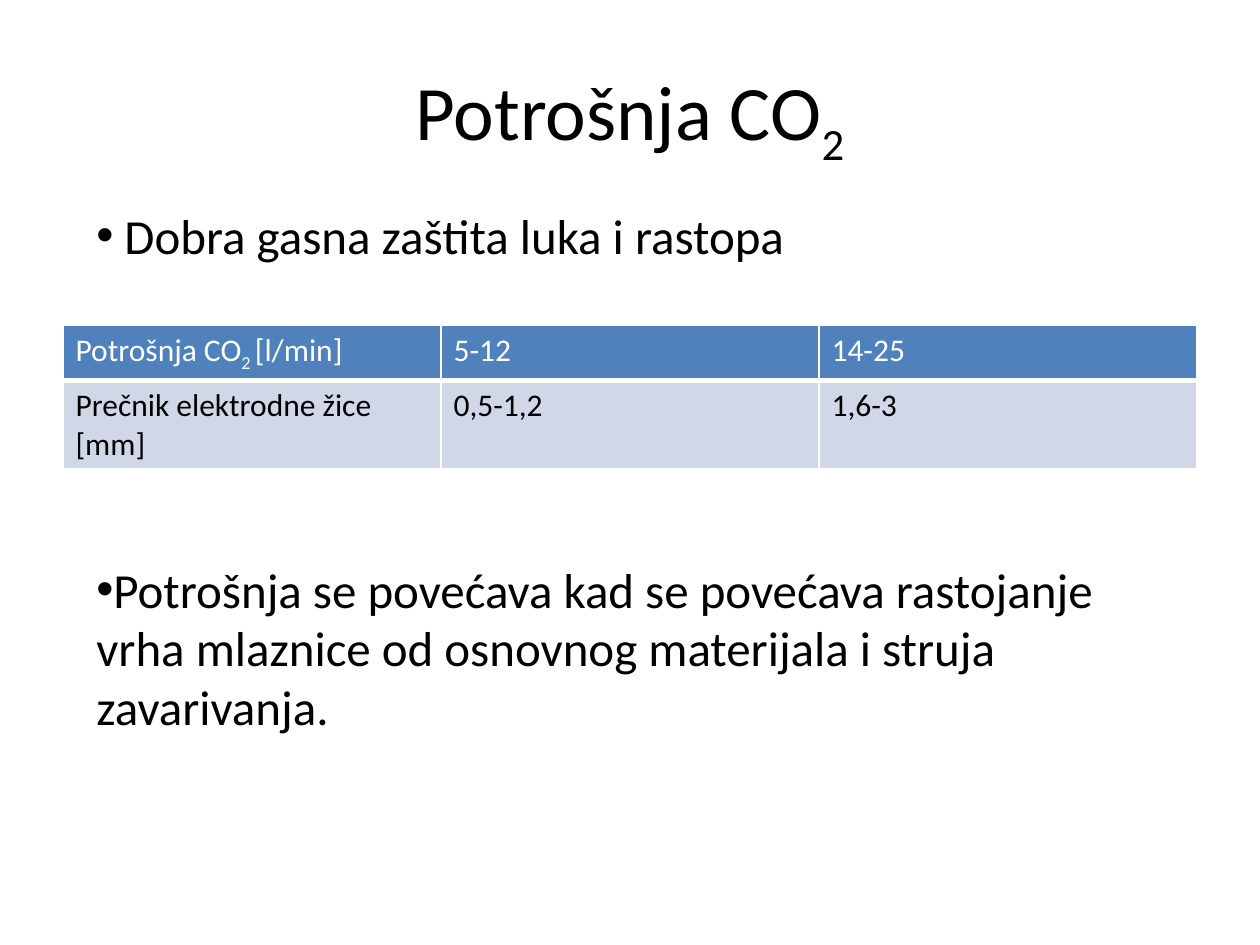
"""Build a slide on CO2 consumption with a title, two bullets and a table."""
from lxml import etree
from pptx import Presentation
from pptx.dml.color import RGBColor
from pptx.enum.text import MSO_ANCHOR, MSO_AUTO_SIZE, PP_ALIGN
from pptx.oxml.ns import qn
from pptx.util import Emu, Pt

PX = 914400 / 126
MIDDLE = MSO_ANCHOR.MIDDLE
GROW = MSO_AUTO_SIZE.SHAPE_TO_FIT_TEXT
CENTER = PP_ALIGN.CENTER
THEME = {
    "font": "Calibri",
    "black": "000000",
    "white": "FFFFFF",
    "header": "4F81BD",
    "band": "D0D8E8",
    "title_size": 44,
    "body_size": 28,
    "table_size": 18,
}


def px(*lengths):
    return [Emu(round(length * PX)) for length in lengths]


def write(para, *texts, size, color=THEME["black"], subscript=None):
    for index, text in enumerate(texts):
        span = para.add_run()
        span.text = text
        span.font.name = THEME["font"]
        span.font.size = Pt(size)
        span.font.color.rgb = RGBColor.from_string(color)
        if index == subscript:
            span.font._element.set("baseline", "-25000")


deck = Presentation()
deck.slide_width, deck.slide_height = px(1260, 945)
page = deck.slides.add_slide(deck.slide_layouts[6])

title = page.shapes.add_textbox(*px(63, 38, 1134, 157)).text_frame
title.word_wrap = True
title.vertical_anchor = MIDDLE
title.paragraphs[0].alignment = CENTER
write(title.paragraphs[0], "Potrošnja CO", "2", size=THEME["title_size"], subscript=1)

rows = [
    [("Potrošnja CO", "2 ", "[l/min]"), ("5-12",), ("14-25",)],
    [("Prečnik elektrodne žice [mm]",), ("0,5-1,2",), ("1,6-3",)],
]
row_styles = [("header", "white", 3), ("band", "black", 1)]
table = page.shapes.add_table(2, 3, *px(63, 325, 1134, 104)).table
for row_index, (row, style) in enumerate(zip(rows, row_styles)):
    fill, color, bottom_width = style
    for column_index, texts in enumerate(row):
        cell = table.cell(row_index, column_index)
        properties = cell._tc.get_or_add_tcPr()
        for side, width in (("L", 1), ("R", 1), ("T", 1), ("B", bottom_width)):
            border = etree.SubElement(properties, qn(f"a:ln{side}"), w=str(Pt(width)))
            paint = etree.SubElement(border, qn("a:solidFill"))
            etree.SubElement(paint, qn("a:srgbClr"), val=THEME["white"])
        cell.fill.solid()
        cell.fill.fore_color.rgb = RGBColor.from_string(THEME[fill])
        write(cell.text_frame.paragraphs[0], *texts, size=THEME["table_size"],
              color=THEME[color], subscript=1)

bullets = [
    (" Dobra gasna zaštita luka i rastopa", 0),
    ("Potrošnja se povećava kad se povećava rastojanje vrha mlaznice "
     "od osnovnog materijala i struja zavarivanja.", 295),
]
body = page.shapes.add_textbox(*px(84, 199, 1103, 547)).text_frame
body.word_wrap = True
body.auto_size = GROW
for index, (text, gap) in enumerate(bullets):
    para = body.add_paragraph() if index else body.paragraphs[0]
    para.space_before = px(gap)[0]
    properties = para._p.get_or_add_pPr()
    etree.SubElement(properties, qn("a:buFont"), typeface="Arial")
    etree.SubElement(properties, qn("a:buChar"), char="•")
    write(para, text, size=THEME["body_size"])

deck.save("out.pptx")
